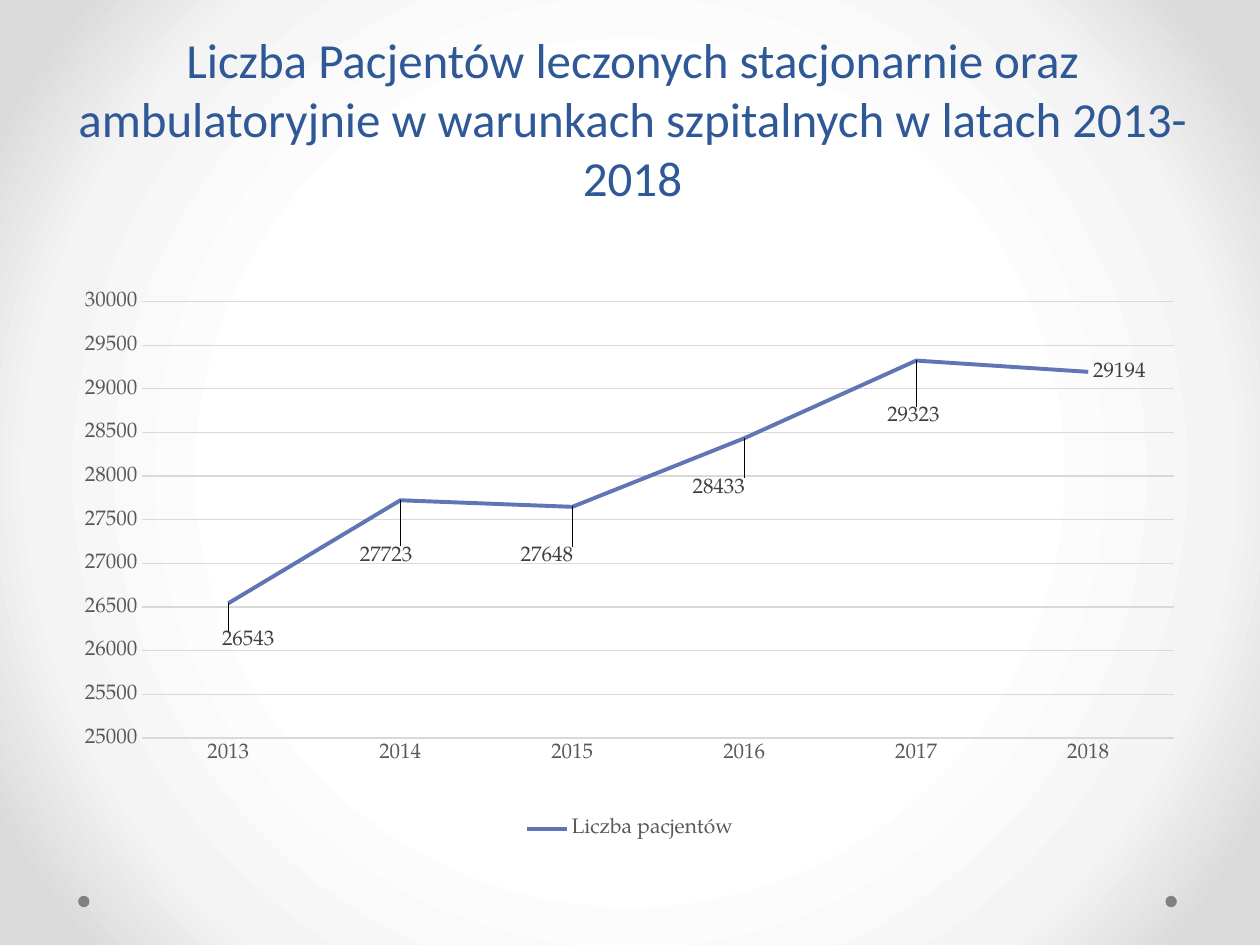
from lxml import etree
from pptx import Presentation
from pptx import util as u
from pptx.chart.data import CategoryChartData
from pptx.dml.color import RGBColor
from pptx.enum import chart as charts, shapes, text
from pptx.oxml import parse_xml
from pptx.oxml.ns import nsdecls, qn

COLORS = {
    "title": "2F5897", "line": "6076B4", "grid": "D9D9D9", "axis": "595959",
    "label": "404040", "dot": "808080",
}
BACKGROUND_STOPS = [(50, "FFFFFF"), (76, "F4F4F4"), (92, "DADADA")]
CHART_FONT = "TeX Gyre Pagella"
PATIENTS = {
    "2013": 26543, "2014": 27723, "2015": 27648,
    "2016": 28433, "2017": 29323, "2018": 29194,
}
# Shift of each value label from its point, as a share of the chart's size.
LABEL_SHIFTS = [(-0.01, 0.06), (-0.04, 0.09), (-0.05, 0.08), (-0.05, 0.08), (-0.03, 0.09)]


def rgb(name):
    return RGBColor.from_string(COLORS[name])


def set_all(target, **values):
    for name, value in values.items():
        setattr(target, name, value)


def style_font(font, color, size=12, name=CHART_FONT):
    set_all(font, size=u.Pt(size), name=name, bold=False)
    font.color.rgb = rgb(color)


def style_line(line, color, width):
    line.color.rgb = rgb(color)
    line.width = u.Pt(width)


def set_background(slide):
    """Fill the slide with a gradient that spreads from its centre."""
    slide.background.fill.gradient()
    gradient = slide.element.find(".//" + qn("a:gradFill"))
    for child in list(gradient):
        gradient.remove(child)
    stops = etree.SubElement(gradient, qn("a:gsLst"))
    for place, color in BACKGROUND_STOPS:
        stop = etree.SubElement(stops, qn("a:gs"), pos=str(place * 1000))
        etree.SubElement(stop, qn("a:srgbClr"), val=color)
    spread = etree.SubElement(gradient, qn("a:path"), path="circle")
    sides = {side: "50000" for side in "ltrb"}
    etree.SubElement(spread, qn("a:fillToRect"), **sides)


def add_dot(slide, left):
    dot = slide.shapes.add_shape(
        shapes.MSO_SHAPE.OVAL, u.Inches(left), u.Inches(7.11), u.Inches(0.09), u.Inches(0.09))
    dot.shadow.inherit = False
    dot.fill.solid()
    dot.fill.fore_color.rgb = rgb("dot")
    dot.line.fill.background()


def set_title(slide, words):
    title = slide.shapes.title
    set_all(title, left=u.Inches(0.52), top=u.Inches(0.44),
            width=u.Inches(9), height=u.Inches(0.99))
    frame = title.text_frame
    set_all(frame, text=words, word_wrap=True, auto_size=text.MSO_AUTO_SIZE.NONE,
            vertical_anchor=text.MSO_ANCHOR.MIDDLE)
    para = frame.paragraphs[0]
    para.alignment = text.PP_ALIGN.CENTER
    style_font(para.runs[0].font, "title", 28, "Calibri")


def manual_layout(**values):
    parts = "".join(f'<c:{name} val="{value}"/>' for name, value in values.items())
    return parse_xml(f'<c:layout {nsdecls("c")}><c:manualLayout>{parts}'
                     '</c:manualLayout></c:layout>')


def place_plot(chart):
    area = chart.element.find(".//" + qn("c:plotArea"))
    for layout in area.findall(qn("c:layout")):
        area.remove(layout)
    area.insert(0, manual_layout(
        layoutTarget="inner", xMode="edge", yMode="edge", x=0.07, y=0.13, w=0.91, h=0.7))


def style_axes(chart):
    for axis in (chart.category_axis, chart.value_axis):
        set_all(axis, major_tick_mark=charts.XL_TICK_MARK.NONE,
                minor_tick_mark=charts.XL_TICK_MARK.NONE)
        style_font(axis.tick_labels.font, "axis")
    style_line(chart.category_axis.format.line, "grid", 0.75)
    values = chart.value_axis
    set_all(values, minimum_scale=25000, maximum_scale=30000, major_unit=500,
            has_major_gridlines=True)
    values.format.line.fill.background()
    style_line(values.major_gridlines.format.line, "grid", 0.75)


def style_series(series):
    series.smooth = False
    series.marker.style = charts.XL_MARKER_STYLE.NONE
    style_line(series.format.line, "line", 2.25)
    right = charts.XL_LABEL_POSITION.RIGHT
    labels = series.data_labels
    set_all(labels, show_value=True, position=right)
    style_font(labels.font, "label")
    for index in range(len(LABEL_SHIFTS)):
        label = series.points[index].data_label
        label.position = right
        style_font(label.font, "label")
    entries = labels._element.findall(qn("c:dLbl"))
    for entry, (across, down) in zip(entries, LABEL_SHIFTS):
        entry.find(qn("c:idx")).addnext(manual_layout(x=across, y=down))


def add_patient_chart(slide):
    data = CategoryChartData()
    data.categories = list(PATIENTS)
    data.add_series("Liczba pacjentów", list(PATIENTS.values()))
    chart = slide.shapes.add_chart(
        charts.XL_CHART_TYPE.LINE, u.Inches(0.5), u.Inches(1.75),
        u.Inches(9), u.Inches(4.95), data).chart
    set_all(chart, has_title=False, has_legend=True)
    chart.font.name = CHART_FONT
    chart.font.size = u.Pt(10)
    set_all(chart.legend, position=charts.XL_LEGEND_POSITION.BOTTOM, include_in_layout=False)
    style_font(chart.legend.font, "axis")
    chart.plots[0].vary_by_categories = False
    place_plot(chart)
    style_axes(chart)
    style_series(chart.plots[0].series[0])


def main():
    deck = Presentation()
    set_all(deck, slide_width=u.Inches(10), slide_height=u.Inches(7.5))
    slide = deck.slides.add_slide(deck.slide_layouts[5])
    set_background(slide)
    for left in (9.25, 0.62):
        add_dot(slide, left)
    set_title(slide, "Liczba Pacjentów leczonych stacjonarnie oraz ambulatoryjnie "
                     "w warunkach szpitalnych w latach 2013-2018")
    add_patient_chart(slide)
    deck.save("out.pptx")


if __name__ == "__main__":
    main()
